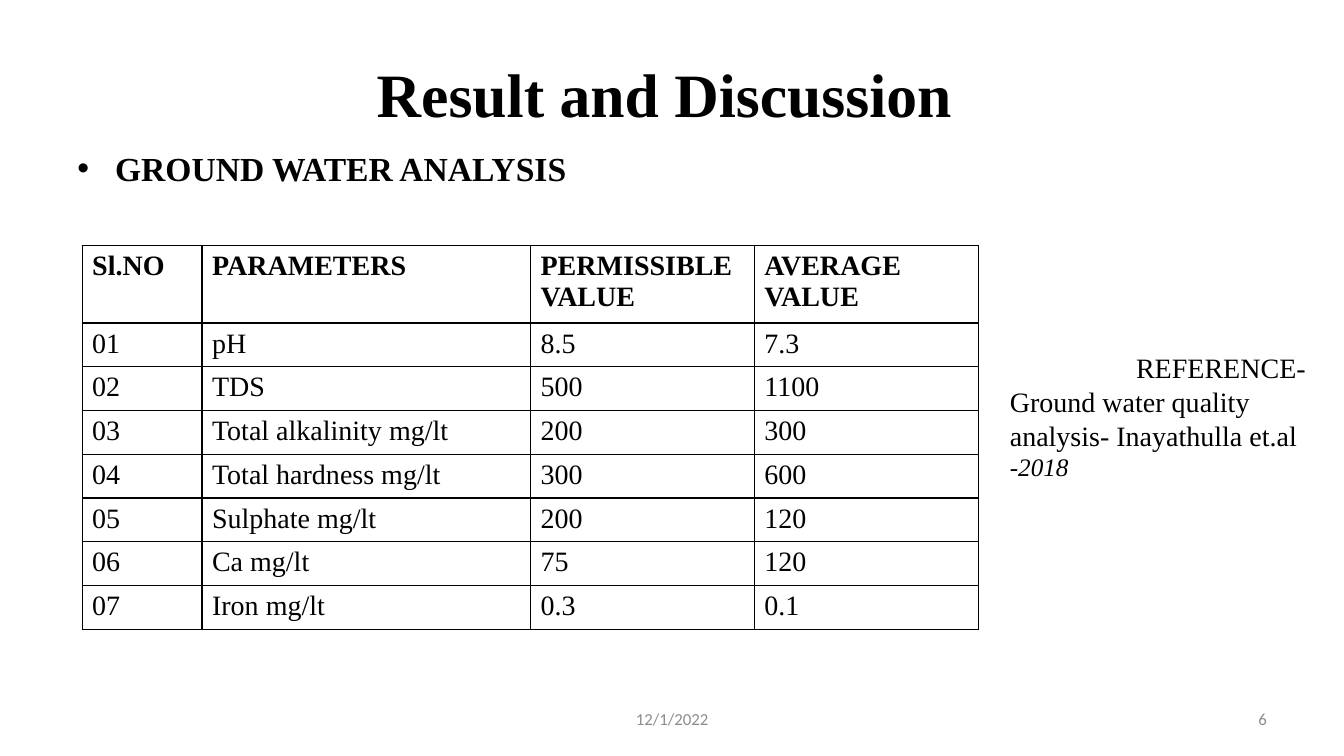
import lxml.etree
import pptx
import pptx.dml.color
import pptx.enum.text
import pptx.oxml.ns
import pptx.util

Cm = pptx.util.Cm
Pt = pptx.util.Pt
qn = pptx.oxml.ns.qn
Align = pptx.enum.text.PP_ALIGN
Anchor = pptx.enum.text.MSO_ANCHOR


def colour(value):
    return pptx.dml.color.RGBColor.from_string(value)


class ReportPage:
    serif = "Times New Roman"
    sans = "Calibri"
    ink = "000000"
    grey = "8C8C8C"

    def __init__(self, deck):
        self.page = deck.slides.add_slide(deck.slide_layouts[6])

    def span(self, para, text, size, bold=False, italic=False, font=serif, ink=ink):
        span = para.add_run()
        span.text = text
        span.font.name = font
        span.font.size = Pt(size)
        span.font.bold = bold
        span.font.italic = italic
        span.font.color.rgb = colour(ink)

    def text(self, left, top, width, height, align=Align.LEFT, anchor=Anchor.TOP):
        box = self.page.shapes.add_textbox(Cm(left), Cm(top), Cm(width), Cm(height))
        frame = box.text_frame
        frame.word_wrap = True
        frame.vertical_anchor = anchor
        para = frame.paragraphs[0]
        para.alignment = align
        return frame, para

    def title(self, text):
        frame, para = self.text(1.7, 0.76, 30.48, 3.18, Align.CENTER, Anchor.MIDDLE)
        self.span(para, text, 44, bold=True)

    def bullet(self, text):
        frame, para = self.text(1.7, 3.61, 30.48, 13.41)
        para.space_before = Pt(3)
        properties = para._p.get_or_add_pPr()
        properties.set("marL", str(Cm(0.95)))
        properties.set("indent", str(-Cm(0.95)))
        lxml.etree.SubElement(properties, qn("a:buFont"), typeface="Arial")
        lxml.etree.SubElement(properties, qn("a:buChar"), char="•")
        self.span(para, text, 24, bold=True)

    def footer(self, text, left, width, align):
        frame, para = self.text(left, 17.65, width, 1.02, align, Anchor.MIDDLE)
        para.line_spacing = Pt(12.4)
        self.span(para, text, 12, font=self.sans, ink=self.grey)

    def reference(self, source, year):
        frame, para = self.text(25.2, 7.9, 8.15, 5.21)
        frame.margin_top = Cm(0.94)
        para._p.get_or_add_pPr().set("indent", str(Cm(3.18)))
        self.span(para, source, 20)
        self.span(para, year, 18, italic=True)

    def border(self, cell):
        properties = cell._tc.get_or_add_tcPr()
        for position, side in enumerate(("a:lnL", "a:lnR", "a:lnT", "a:lnB")):
            line = lxml.etree.Element(qn(side), w=str(Pt(1)))
            fill = lxml.etree.SubElement(line, qn("a:solidFill"))
            lxml.etree.SubElement(fill, qn("a:srgbClr"), val=self.ink)
            properties.insert(position, line)

    def table(self, rows, widths, header_height, row_height):
        height = header_height + row_height * (len(rows) - 1)
        table = self.page.shapes.add_table(
            len(rows), len(widths), Cm(2.07), Cm(6.19), Cm(sum(widths)), Cm(height)
        ).table
        table.first_row = False
        table.horz_banding = False
        for column, width in zip(table.columns, widths):
            column.width = Cm(width)
        for index, values in enumerate(rows):
            table.rows[index].height = Cm(row_height if index else header_height)
            for cell, value in zip(table.rows[index].cells, values):
                cell.fill.background()
                self.border(cell)
                self.span(cell.text_frame.paragraphs[0], value, 20, bold=index == 0)


def main():
    deck = pptx.Presentation()
    deck.slide_width = Cm(33.87)
    deck.slide_height = Cm(19.05)
    report = ReportPage(deck)
    report.title("Result and Discussion ")
    report.bullet("GROUND WATER ANALYSIS")
    report.footer("12/1/2022", 11.58, 10.72, Align.CENTER)
    report.footer("6", 24.28, 7.9, Align.RIGHT)
    report.reference(
        "REFERENCE- Ground water quality analysis- Inayathulla et.al", " -2018"
    )
    measurements = [
        ("pH", "8.5", "7.3"),
        ("TDS", "500", "1100"),
        ("Total alkalinity mg/lt", "200", "300"),
        ("Total hardness mg/lt", "300", "600"),
        ("Sulphate mg/lt", "200", "120"),
        ("Ca mg/lt", "75", "120"),
        ("Iron mg/lt", "0.3", "0.1"),
    ]
    rows = [("Sl.NO", "PARAMETERS", "PERMISSIBLE VALUE", "AVERAGE VALUE")]
    rows += [(f"{number:02}", *values) for number, values in enumerate(measurements, 1)]
    report.table(rows, (3.02, 8.28, 5.64, 5.64), 1.94, 1.1)
    deck.save("out.pptx")


if __name__ == "__main__":
    main()
